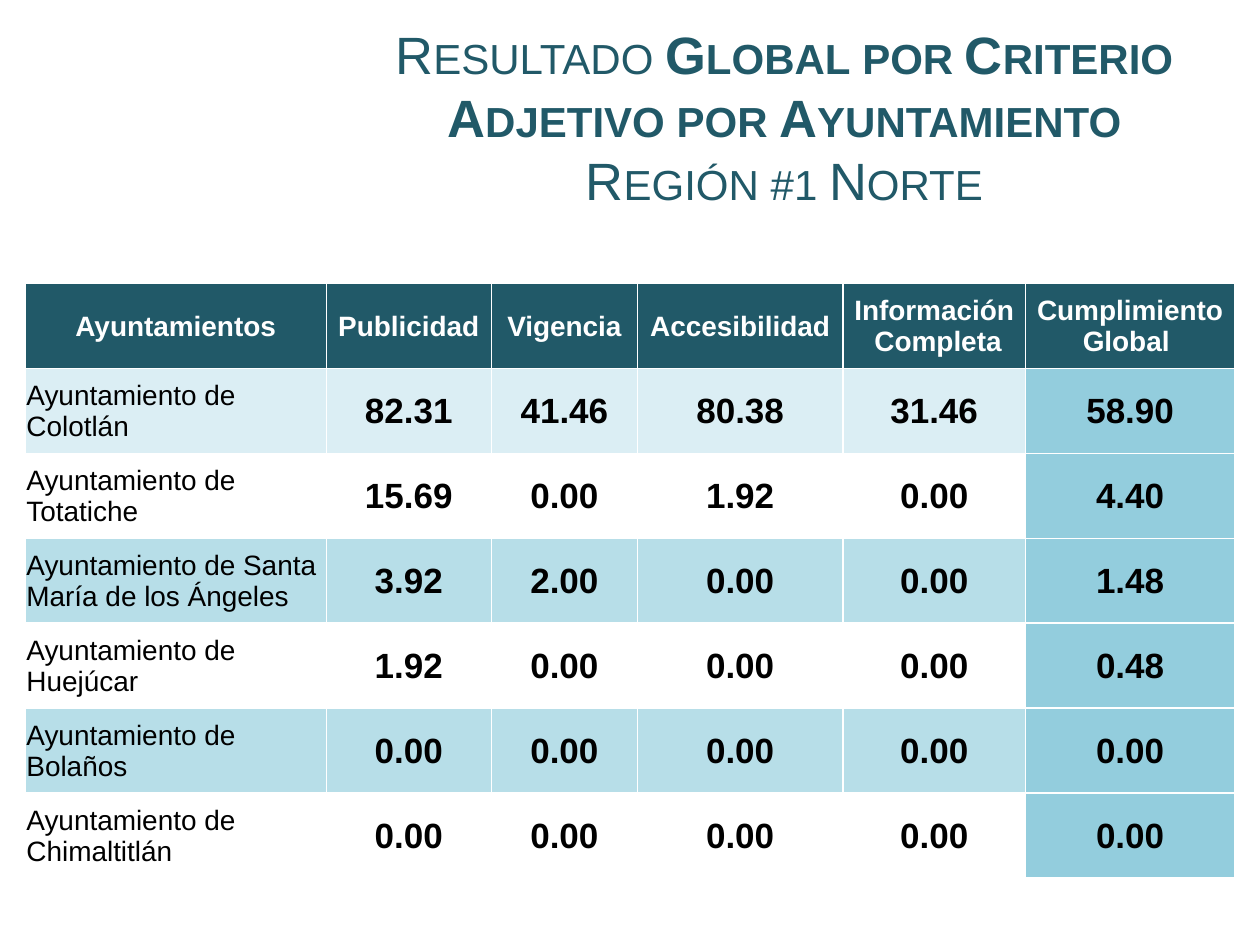
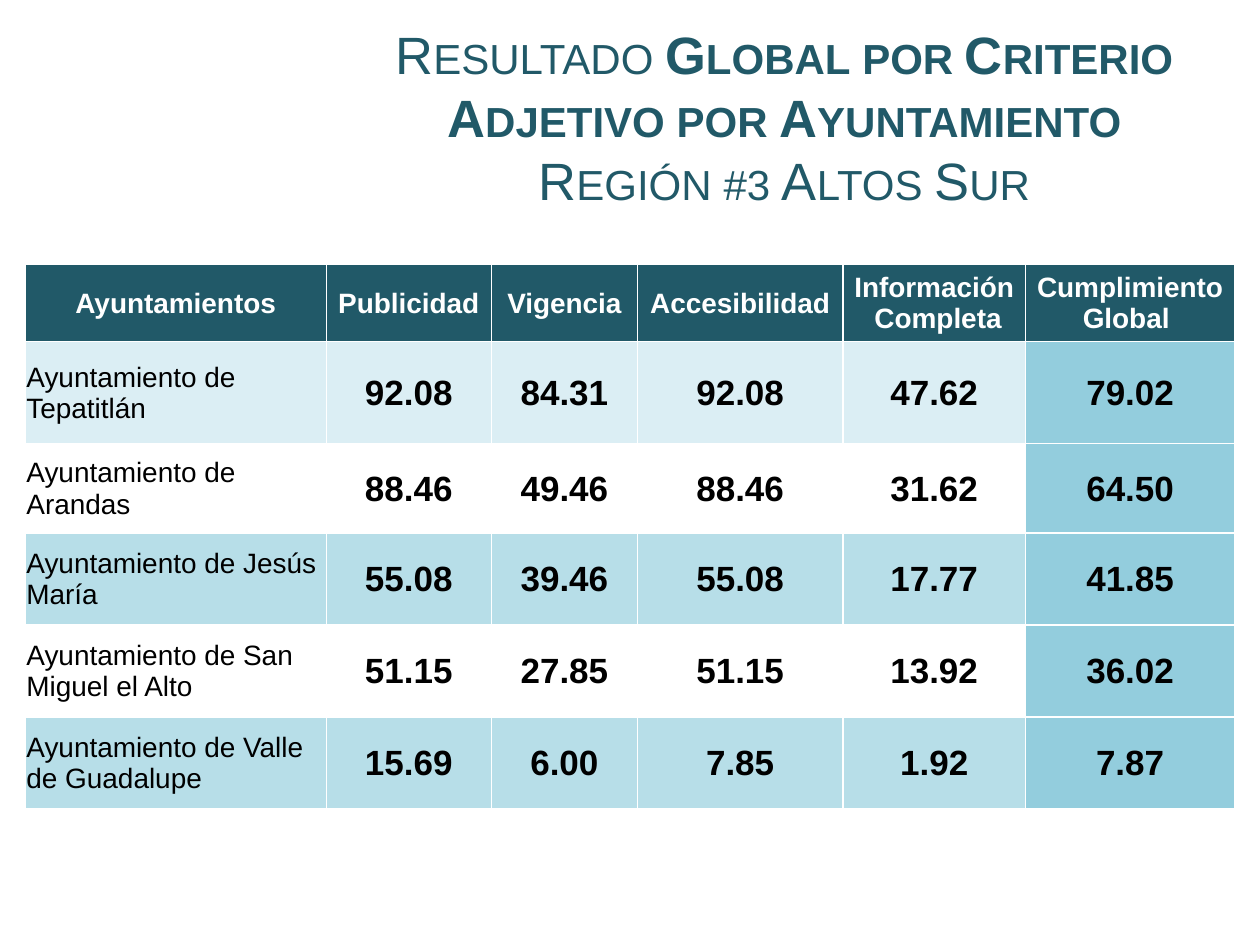
"""Build the two slides of results by criterion for the municipalities of each region."""

from lxml.etree import SubElement
from pptx import Presentation
from pptx.dml.color import RGBColor
from pptx.enum.text import MSO_ANCHOR, MSO_AUTO_SIZE, PP_ALIGN
from pptx.oxml.ns import qn
from pptx.util import Inches, Pt

FONT = "Arial"
TEAL = RGBColor(0x21, 0x59, 0x68)
GLOBAL_BLUE = RGBColor(0x93, 0xCD, 0xDD)
BAND_BLUE = RGBColor(0xB7, 0xDE, 0xE8)
FIRST_BLUE = RGBColor(0xDB, 0xEE, 0xF4)
WHITE = RGBColor(0xFF, 0xFF, 0xFF)
BLACK = RGBColor(0x00, 0x00, 0x00)

TITLE_START = "Resultado "
TITLE_BOLD = "Global por Criterio Adjetivo por Ayuntamiento "
HEADINGS = ("Ayuntamientos", "Publicidad", "Vigencia", "Accesibilidad",
            "Información\n Completa", "Cumplimiento Global ")
COLUMN_WIDTHS = (2.39, 1.31, 1.16, 1.63, 1.45, 1.66)
TABLE_LEFT = 0.2

REGIONS = [
    {
        "name": "Región #1 Norte",
        "top": 2.25,
        "row_heights": [4.72 / 7] * 7,
        "results": [
            ("Colotlán", "82.31", "41.46", "80.38", "31.46", "58.90"),
            ("Totatiche", "15.69", "0.00", "1.92", "0.00", "4.40"),
            ("Santa María de los Ángeles", "3.92", "2.00", "0.00", "0.00", "1.48"),
            ("Huejúcar", "1.92", "0.00", "0.00", "0.00", "0.48"),
            ("Bolaños", "0.00", "0.00", "0.00", "0.00", "0.00"),
            ("Chimaltitlán", "0.00", "0.00", "0.00", "0.00", "0.00"),
        ],
    },
    {
        "name": "Región #3 Altos Sur",
        "top": 2.1,
        "row_heights": [0.61, 0.81, 0.71, 0.73, 0.73, 0.73],
        "results": [
            ("Tepatitlán", "92.08", "84.31", "92.08", "47.62", "79.02"),
            ("Arandas", "88.46", "49.46", "88.46", "31.62", "64.50"),
            ("Jesús María", "55.08", "39.46", "55.08", "17.77", "41.85"),
            ("San Miguel el Alto", "51.15", "27.85", "51.15", "13.92", "36.02"),
            ("Valle de Guadalupe", "15.69", "6.00", "7.85", "1.92", "7.87"),
        ],
    },
]


def add_text(paragraph, text, size=16, color=BLACK, bold=False,
             align=PP_ALIGN.CENTER, small_caps=False):
    """Append formatted text to a paragraph, with a line break at each newline."""
    paragraph.alignment = align
    for index, line in enumerate(text.split("\n")):
        if index:
            paragraph.add_line_break()
        run = paragraph.add_run()
        run.text = line
        run.font.name = FONT
        run.font.size = Pt(size)
        run.font.bold = bold
        run.font.color.rgb = color
        if small_caps:
            run.font._element.set("cap", "small")


def add_title(slide, region_name):
    """Place the title and write its plain and bold parts."""
    title = slide.shapes.title
    title.left, title.top = Inches(2.95), Inches(0.3)
    title.width, title.height = Inches(6.55), Inches(1.25)
    frame = title.text_frame
    frame.word_wrap = True
    frame.auto_size = MSO_AUTO_SIZE.NONE
    frame.vertical_anchor = MSO_ANCHOR.MIDDLE
    for text, bold in ((TITLE_START, False), (TITLE_BOLD, True), (region_name, False)):
        add_text(frame.paragraphs[0], text, size=30, color=TEAL, bold=bold, small_caps=True)


def add_borders(cell):
    """Draw a thin white line on each side of a cell."""
    properties = cell._tc.get_or_add_tcPr()
    for side in ("a:lnL", "a:lnR", "a:lnT", "a:lnB"):
        line = SubElement(properties, qn(side), w=str(Pt(1)))
        fill = SubElement(line, qn("a:solidFill"))
        SubElement(fill, qn("a:srgbClr"), val=str(WHITE))


def cell_fill(row, column):
    """Return the fill colour for a place in the table."""
    if row == 0:
        return TEAL
    if column == len(HEADINGS) - 1:
        return GLOBAL_BLUE
    if row == 1:
        return FIRST_BLUE
    return BAND_BLUE if row % 2 else WHITE


def text_format(row, column):
    """Return the text format for a place in the table."""
    if row == 0:
        return {"color": WHITE, "bold": True}
    if column == 0:
        return {"align": PP_ALIGN.LEFT}
    return {"size": 20, "bold": True}


def add_results_table(slide, region):
    """Add the table with one row for each municipality."""
    rows = [HEADINGS] + [(f"Ayuntamiento de {name}", *values)
                         for name, *values in region["results"]]
    heights = region["row_heights"]
    table = slide.shapes.add_table(
        len(rows), len(HEADINGS), Inches(TABLE_LEFT), Inches(region["top"]),
        Inches(sum(COLUMN_WIDTHS)), Inches(sum(heights))).table
    for column, width in zip(table.columns, COLUMN_WIDTHS):
        column.width = Inches(width)
    for row, height in zip(table.rows, heights):
        row.height = Inches(height)
    for row_index, texts in enumerate(rows):
        for column_index, text in enumerate(texts):
            cell = table.cell(row_index, column_index)
            cell.margin_left = cell.margin_right = cell.margin_top = Inches(0.01)
            cell.margin_bottom = 0
            cell.vertical_anchor = MSO_ANCHOR.MIDDLE
            add_borders(cell)
            cell.fill.solid()
            cell.fill.fore_color.rgb = cell_fill(row_index, column_index)
            add_text(cell.text_frame.paragraphs[0], text,
                     **text_format(row_index, column_index))


def main():
    """Build and save the presentation."""
    presentation = Presentation()
    presentation.slide_width, presentation.slide_height = Inches(10), Inches(7.5)
    for region in REGIONS:
        slide = presentation.slides.add_slide(presentation.slide_layouts[5])
        add_title(slide, region["name"])
        add_results_table(slide, region)
    presentation.save("out.pptx")


if __name__ == "__main__":
    main()
